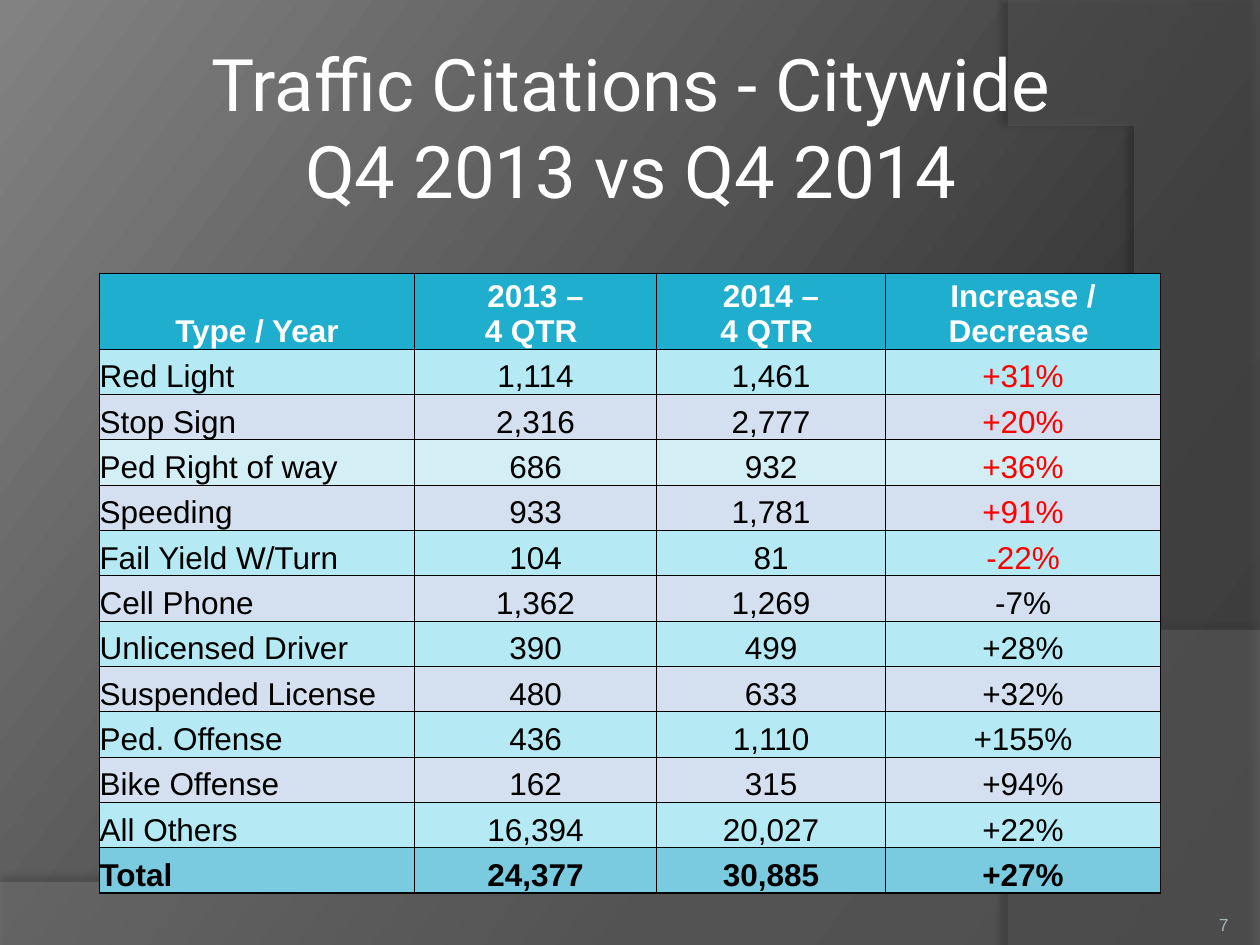
import copy
import dataclasses

import lxml.etree
import pptx
import pptx.dml.color
import pptx.enum.text
import pptx.oxml.ns
import pptx.util

Inches = pptx.util.Inches
Pt = pptx.util.Pt
RGB = pptx.dml.color.RGBColor.from_string
qn = pptx.oxml.ns.qn
ALIGN = pptx.enum.text.PP_ALIGN
ANCHOR = pptx.enum.text.MSO_ANCHOR


@dataclasses.dataclass(frozen=True)
class Theme:
    title_font: str = "Roboto"
    body_font: str = "Arial"
    title_size: float = 41.4
    table_size: float = 18
    number_size: float = 10
    white: str = "FFFFFF"
    black: str = "000000"
    alert: str = "FF0000"
    number: str = "A4B5B9"
    header: str = "1FAECD"
    total: str = "7ACBE0"
    band_odd: str = "B5E9F4"
    band_even: str = "D4DFEF"
    band_pale: str = "D3EEF5"
    bottom_wave: str = "7F7F7F"
    right_wave: str = "5E5E5E"
    background: tuple = ((0, "2F2F2F"), (0.3, "383838"), (1, "828282"))


THEME = Theme()

HEADER = (("Type / Year",), ("2013 –", "4 QTR "), ("2014 –", "4 QTR "),
          ("Increase / Decrease ",))
CITATIONS = (
    ("Red Light", "1,114", "1,461", "+31%"),
    ("Stop Sign", "2,316", "2,777", "+20%"),
    ("Ped Right of way", "686", "932", "+36%"),
    ("Speeding", "933", "1,781", "+91%"),
    ("Fail Yield W/Turn", "104", "81", "-22%"),
    ("Cell Phone", "1,362", "1,269", "-7%"),
    ("Unlicensed Driver", "390", "499", "+28%"),
    ("Suspended License", "480", "633", "+32%"),
    ("Ped. Offense", "436", "1,110", "+155%"),
    ("Bike Offense", "162", "315", "+94%"),
    ("All Others", "16,394", "20,027", "+22%"),
)
TOTAL = ("Total", "24,377", "30,885", "+27%")
ALERT_ROWS = range(1, 6)
PALE_ROW = 3
COLUMN_WIDTHS = (2.5, 1.92, 1.82, 2.18)


def add_text(p, text, font, size, color, bold=False):
    r = p.add_run()
    r.text = text
    r.font.name = font
    r.font.size = Pt(size)
    r.font.bold = bold
    r.font.color.rgb = RGB(color)


def set_margins(target, left, top, right, bottom):
    target.margin_left, target.margin_top = Inches(left), Inches(top)
    target.margin_right, target.margin_bottom = Inches(right), Inches(bottom)


def add_xml(parent, tag, **attrs):
    return lxml.etree.SubElement(parent, qn(tag), attrs)


def set_background(s):
    fill = s.background.fill
    fill.gradient()
    fill.gradient_angle = 143
    stops = s.background._cSld.find(".//" + qn("a:gsLst"))
    stops.append(copy.deepcopy(stops[0]))
    for stop, (position, color) in zip(fill.gradient_stops, THEME.background):
        stop.position = position
        stop.color.rgb = RGB(color)


def curve(p0, p1, p2, p3, steps=40):
    def at(t):
        u = 1 - t
        weights = (u ** 3, 3 * u * u * t, 3 * u * t * t, t ** 3)
        return tuple(sum(w * p[axis] for w, p in zip(weights, (p0, p1, p2, p3)))
                     for axis in (0, 1))
    return [at(i / steps) for i in range(steps + 1)]


def add_wave(s, points, color, opacity, shadow_opacity, distance, direction):
    builder = s.shapes.build_freeform(*points[0], scale=Inches(1))
    builder.add_line_segments(points[1:], close=True)
    sp = builder.convert_to_shape()
    sp.fill.solid()
    sp.fill.fore_color.rgb = RGB(color)
    sp.line.fill.background()
    sp.shadow.inherit = False
    srgb = sp._element.spPr.find(qn("a:solidFill"))[0]
    add_xml(srgb, "a:alpha", val=str(opacity * 1000))
    effects = sp._element.spPr.find(qn("a:effectLst"))
    shadow = add_xml(effects, "a:outerShdw", blurRad=str(Pt(4)),
                     dist=str(Pt(distance)), dir=str(direction * 60000),
                     algn="ctr", rotWithShape="0")
    shade = add_xml(shadow, "a:srgbClr", val=THEME.black)
    add_xml(shade, "a:alpha", val=str(shadow_opacity * 1000))


def add_title(s, lines):
    sp = s.shapes.title
    s.shapes._spTree.append(sp._element)
    sp.left, sp.top, sp.width, sp.height = map(Inches, (0.17, 0.25, 9.67, 1.5))
    tf = sp.text_frame
    tf.auto_size = pptx.enum.text.MSO_AUTO_SIZE.NONE
    tf.vertical_anchor = ANCHOR.MIDDLE
    set_margins(tf, 0.05, 0.05, 0.05, 0.05)
    p = tf.paragraphs[0]
    p.alignment = ALIGN.CENTER
    for i, line in enumerate(lines):
        if i:
            p.add_line_break()
        add_text(p, line, THEME.title_font, THEME.title_size, THEME.white)


def add_slide_number(s, number):
    tf = s.shapes.add_textbox(*map(Inches, (8.92, 7.02, 0.83, 0.4))).text_frame
    tf.word_wrap = True
    tf.vertical_anchor = ANCHOR.BOTTOM
    set_margins(tf, 0, 0, 0, 0)
    p = tf.paragraphs[0]
    p.alignment = ALIGN.RIGHT
    add_text(p, number, THEME.body_font, THEME.number_size, THEME.number)


def set_borders(cell, outer_edges):
    tcPr = cell._tc.get_or_add_tcPr()
    for i, (side, outer) in enumerate(zip("LRTB", outer_edges)):
        ln = lxml.etree.Element(qn("a:ln" + side), w=str(Pt(1 if outer else 0.5)))
        add_xml(add_xml(ln, "a:solidFill"), "a:srgbClr", val=THEME.black)
        tcPr.insert(i, ln)


def fill_cell(cell, lines, fill, color, bold, align, inset):
    cell.fill.solid()
    cell.fill.fore_color.rgb = RGB(fill)
    cell.vertical_anchor = ANCHOR.BOTTOM
    set_margins(cell, inset, inset, inset, 0)
    tf = cell.text_frame
    for i, line in enumerate(lines):
        p = tf.add_paragraph() if i else tf.paragraphs[0]
        p.alignment = align
        add_text(p, line, THEME.body_font, THEME.table_size, color, bold)


def row_fill(row, last):
    special = {0: THEME.header, PALE_ROW: THEME.band_pale, last: THEME.total}
    return special.get(row, THEME.band_odd if row % 2 else THEME.band_even)


def add_citation_table(s):
    rows = [HEADER] + [[(text,) for text in row] for row in CITATIONS + (TOTAL,)]
    last, right = len(rows) - 1, len(COLUMN_WIDTHS) - 1
    table = s.shapes.add_table(len(rows), len(COLUMN_WIDTHS),
                               *map(Inches, (0.79, 2.17, 8.42, 4.9))).table
    for column, width in zip(table.columns, COLUMN_WIDTHS):
        column.width = Inches(width)
    for i, row in enumerate(rows):
        table.rows[i].height = Inches(0.36 if i else 0.59)
        for j, lines in enumerate(row):
            cell = table.cell(i, j)
            color = THEME.black if i else THEME.white
            if j == right and i in ALERT_ROWS:
                color = THEME.alert
            fill_cell(cell, lines, row_fill(i, last), color, i in (0, last),
                      ALIGN.LEFT if i and j == 0 else ALIGN.CENTER,
                      0.01 if i and j else 0)
            set_borders(cell, (j == 0, j == right, i == 0, i == last))


def main():
    prs = pptx.Presentation()
    prs.slide_width, prs.slide_height = Inches(10), Inches(7.5)
    s = prs.slides.add_slide(prs.slide_layouts[5])
    set_background(s)
    bottom = [(0, 7.5), (10, 7.5)] + curve((10, 5.2), (5.59, 7.29), (3.91, 7.19), (0, 7.05))
    side = [(10, 0.02), (10, 7.5)] + curve((8.21, 7.5), (9.35, 6.19), (10.18, 3), (8, 0))
    add_wave(s, bottom, THEME.bottom_wave, 45, 35, 3.5, 270)
    add_wave(s, side, THEME.right_wave, 40, 45, 4, 180)
    add_title(s, ("Traffic Citations - Citywide", "Q4 2013 vs Q4 2014"))
    add_slide_number(s, "7")
    add_citation_table(s)
    prs.save("out.pptx")


if __name__ == "__main__":
    main()
